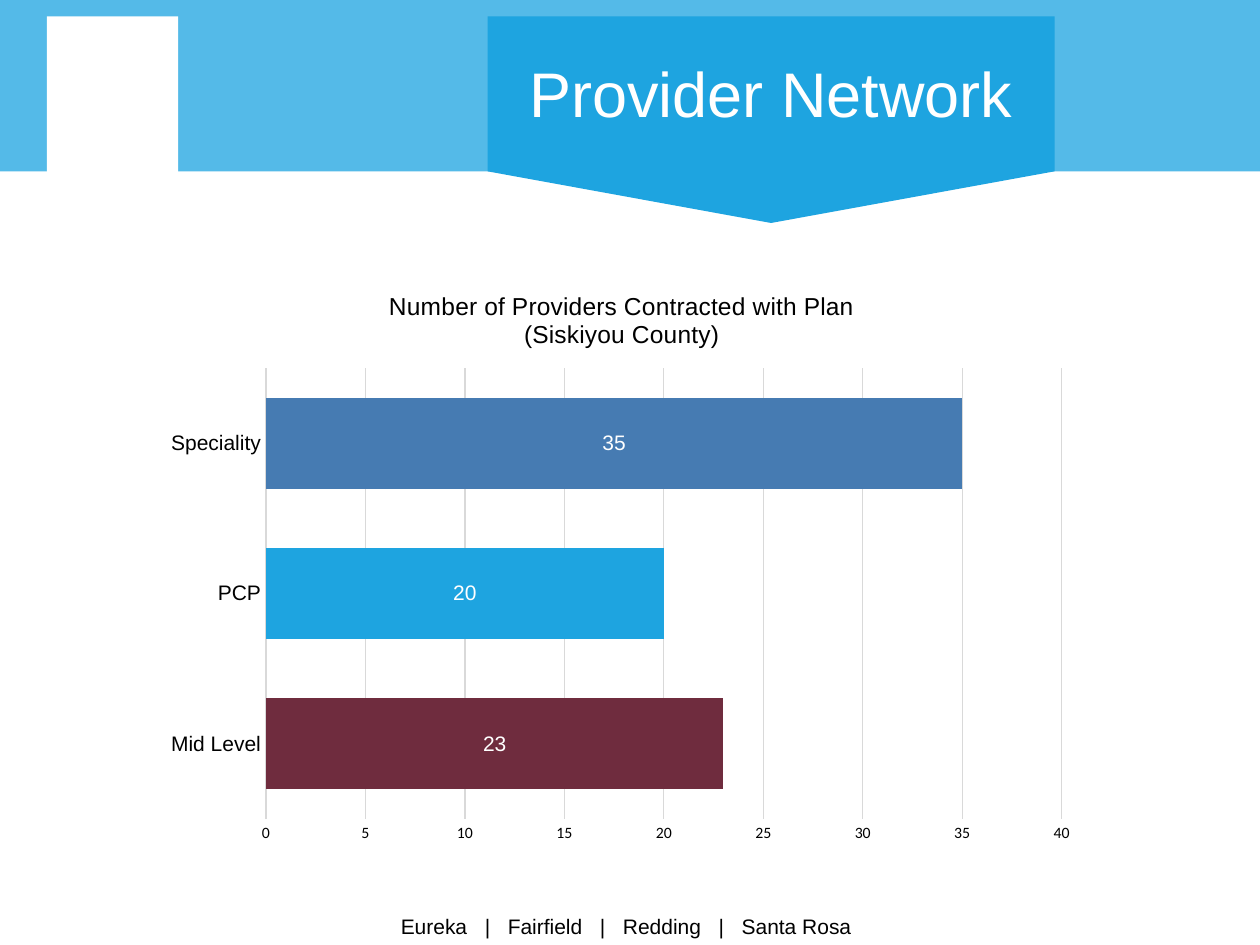
from dataclasses import dataclass

from lxml import etree
from pptx import Presentation
from pptx.chart.data import CategoryChartData
from pptx.dml.color import RGBColor
from pptx.enum import chart as ch, shapes, text
from pptx.oxml import ns
from pptx.util import Pt


@dataclass(frozen=True)
class Theme:
    band: str = "54BAE8"
    banner: str = "1EA4E0"
    white: str = "FFFFFF"
    ink: str = "000000"
    grid: str = "D9D9D9"
    mid_level: str = "6F2C3E"
    speciality: str = "467BB2"
    face: str = "Arial"
    axis_face: str = "Calibri"
    heading: int = 36
    chart_title: int = 14
    body: int = 12
    axis: int = 9


THEME = Theme()


def style(font, size, color=THEME.ink, face=THEME.face):
    font.name, font.size, font.bold = face, Pt(size), False
    font.color.rgb = RGBColor.from_string(color)


def add_plain(slide, kind, box, color):
    """Add a preset shape with a flat fill and no line."""
    shape = slide.shapes.add_shape(kind, *map(Pt, box))
    shape.shadow.inherit = False
    shape.fill.solid()
    shape.fill.fore_color.rgb = RGBColor.from_string(color)
    shape.line.fill.background()
    return shape


def add_centred_text(slide, box):
    frame = slide.shapes.add_textbox(*map(Pt, box)).text_frame
    frame.word_wrap = True
    frame.vertical_anchor = text.MSO_ANCHOR.MIDDLE
    paragraph = frame.paragraphs[0]
    paragraph.alignment = text.PP_ALIGN.CENTER
    return paragraph


def add_header(slide, box, title):
    left, top, width, height = box
    rect = shapes.MSO_SHAPE.RECTANGLE
    add_plain(slide, rect, box, THEME.band)

    # The pentagon is turned to point down, so its sides swap about its centre.
    banner_left, banner_top = left + 278.6, top + 9.4
    banner_width, banner_height = 324, 118
    shift = (banner_width - banner_height) / 2
    banner = add_plain(
        slide, shapes.MSO_SHAPE.PENTAGON,
        (banner_left + shift, banner_top - shift, banner_height, banner_width),
        THEME.banner)
    banner.rotation = 90
    banner.adjustments[0] = 0.25

    add_plain(slide, rect, (left + 26.8, top + 9.4, 75, 103), THEME.white)

    heading = add_centred_text(
        slide, (banner_left, banner_top, banner_width, 92))
    heading.text = title
    heading.line_spacing = 0.9
    style(heading.font, THEME.heading, THEME.white)


def place_plot(chart, **fractions):
    """Fix the inner plot area as fractions of the chart."""
    plot_area = chart._chartSpace.chart.plotArea
    for old in plot_area.findall(ns.qn("c:layout")):
        plot_area.remove(old)
    layout = etree.Element(ns.qn("c:layout"))
    manual = etree.SubElement(layout, ns.qn("c:manualLayout"))
    settings = {"layoutTarget": "inner", "xMode": "edge", "yMode": "edge",
                **fractions}
    for tag, value in settings.items():
        etree.SubElement(manual, ns.qn(f"c:{tag}")).set("val", str(value))
    plot_area.insert(0, layout)


def add_provider_chart(slide, box, title, providers):
    """Draw bars from (category, count, color) rows, bottom to top."""
    names, counts, colors = zip(*providers)
    data = CategoryChartData()
    data.categories = names
    data.add_series("Series 1", counts)
    chart = slide.shapes.add_chart(
        ch.XL_CHART_TYPE.BAR_CLUSTERED, *map(Pt, box), data).chart
    chart.has_legend = False
    style(chart.font, THEME.body)

    chart.has_title = True
    chart.chart_title.include_in_layout = False
    frame = chart.chart_title.text_frame
    frame.text = title
    for paragraph in frame.paragraphs:
        style(paragraph.font, THEME.chart_title)

    category_axis, value_axis = chart.category_axis, chart.value_axis
    for axis in (category_axis, value_axis):
        axis.major_tick_mark = axis.minor_tick_mark = ch.XL_TICK_MARK.NONE
    style(category_axis.tick_labels.font, THEME.body)
    style(value_axis.tick_labels.font, THEME.axis, face=THEME.axis_face)
    value_axis.minimum_scale, value_axis.maximum_scale = 0, 40
    value_axis.major_unit = 5
    value_axis.format.line.fill.background()
    for line in (category_axis.format.line,
                 value_axis.major_gridlines.format.line):
        line.color.rgb = RGBColor.from_string(THEME.grid)
        line.width = Pt(0.75)

    plot = chart.plots[0]
    plot.gap_width = 65
    plot.vary_by_categories = False
    bars = plot.series[0]
    for index, color in enumerate(colors):
        fill = bars.points[index].format.fill
        fill.solid()
        fill.fore_color.rgb = RGBColor.from_string(color)
    labels = bars.data_labels
    labels.show_value = True
    labels.position = ch.XL_LABEL_POSITION.CENTER
    style(labels.font, THEME.body, THEME.white)
    place_plot(chart, x=0.12, y=0.17, w=0.85, h=0.77)


def add_footer(slide, box, offices):
    """Centre the offices on one line with widely spaced bars between."""
    line = add_centred_text(slide, box)
    for index, office in enumerate(offices):
        for part in (" ", "|", " ", office) if index else (office,):
            run = line.add_run()
            run.text = part
            if part == " ":
                run.font._element.set("spc", "667")
    style(line.font, THEME.body)


def main():
    deck = Presentation()
    deck.slide_width, deck.slide_height = Pt(720), Pt(540)
    slide = deck.slides.add_slide(deck.slide_layouts[6])
    add_header(slide, (0, 0, 720, 98), "Provider Network")
    add_footer(slide, (-2.2, 518.4, 720, 21.6),
               ("Eureka", "Fairfield", "Redding", "Santa Rosa"))
    add_provider_chart(
        slide, (87.8, 153.4, 535, 334.8),
        "Number of Providers Contracted with Plan\n(Siskiyou County)",
        (("Mid Level", 23, THEME.mid_level),
         ("PCP", 20, THEME.banner),
         ("Speciality", 35, THEME.speciality)))
    deck.save("out.pptx")


if __name__ == "__main__":
    main()
